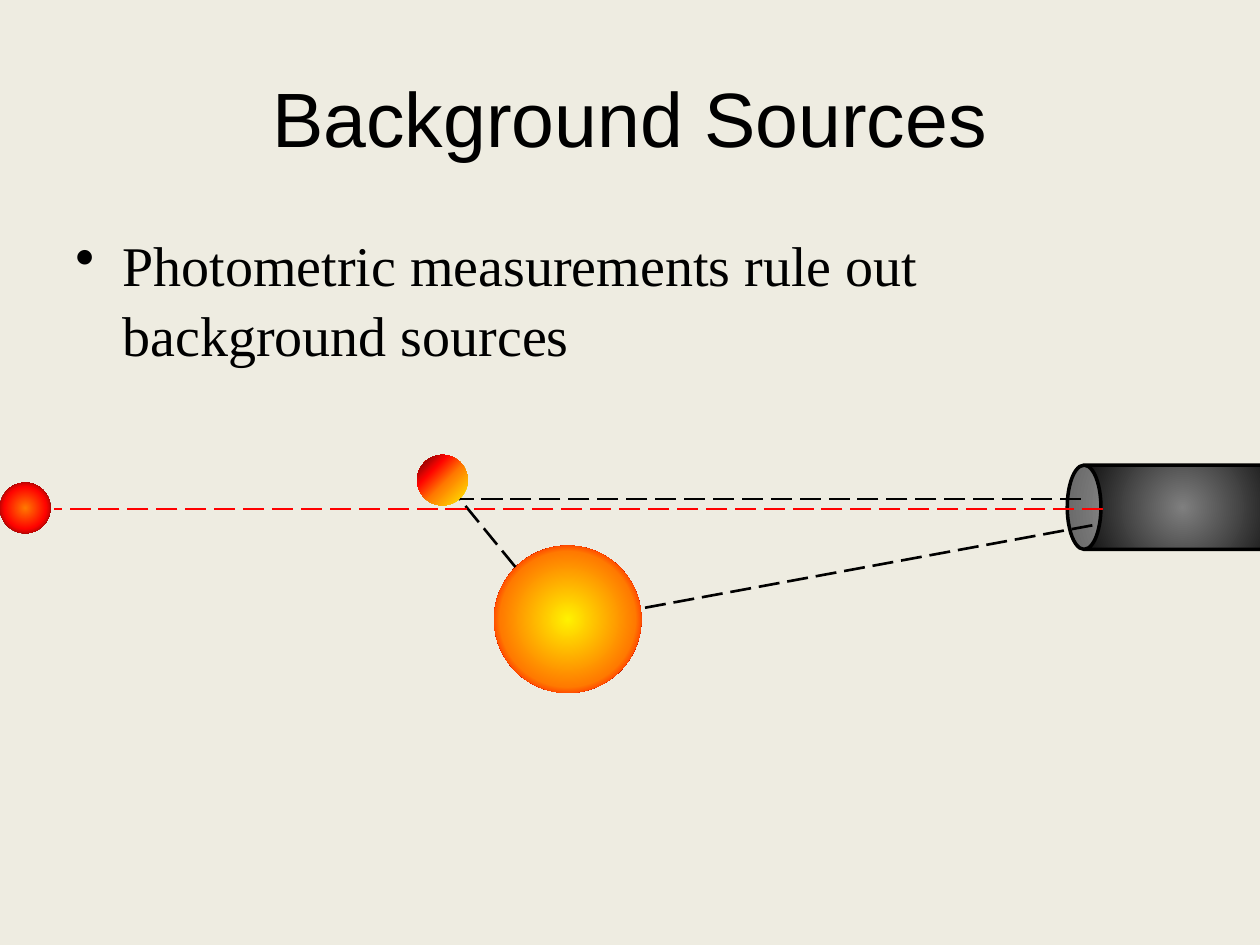
from lxml import etree
from pptx import Presentation
from pptx.dml.color import RGBColor
from pptx.enum.dml import MSO_LINE
from pptx.enum.shapes import MSO_CONNECTOR, MSO_SHAPE
from pptx.enum.text import MSO_ANCHOR, PP_ALIGN
from pptx.oxml import parse_xml
from pptx.oxml.ns import nsdecls, qn
from pptx.util import Cm, Pt

STRAIGHT = MSO_CONNECTOR.STRAIGHT
LONG_DASH = MSO_LINE.LONG_DASH
OVAL, CAN = MSO_SHAPE.OVAL, MSO_SHAPE.CAN
MIDDLE, TOP = MSO_ANCHOR.MIDDLE, MSO_ANCHOR.TOP
CENTER, LEFT = PP_ALIGN.CENTER, PP_ALIGN.LEFT

BACKGROUND = RGBColor(0xEE, 0xEC, 0xE1)
BLACK = RGBColor(0, 0, 0)
RED = RGBColor(0xFF, 0, 0)
YELLOW = RGBColor(0xFF, 0xF2, 0)
ORANGE = RGBColor(0xFF, 0x7A, 0)
SCARLET = RGBColor(0xFF, 0x03, 0)
MAROON = RGBColor(0x4D, 0x08, 0x08)
GRAY = RGBColor(0x7F, 0x7F, 0x7F)

TITLE = "Background Sources"
BULLET = "Photometric measurements rule out background sources"
FIRE = (YELLOW, ORANGE, SCARLET, MAROON)
RADIAL = (
    '<a:path path="circle"><a:fillToRect l="50000" t="50000" r="50000" b="50000"/></a:path>'
)
DIAGONAL = '<a:lin ang="13500000" scaled="0"/>'

TELESCOPE = (22.99, 7.9, 1.7, 4.65)
BODIES = [
    (9.96, 11, 2.97, (0, 65, 81, 100), RADIAL),
    (8.41, 9.17, 1.02, (0, 45, 70, 100), DIAGONAL),
    (0, 9.73, 1.02, (0, 0, 59, 94), RADIAL),
]
LIGHT_PATHS = [
    ((10.39, 11.43), (9.27, 10.06), BLACK),
    ((21.79, 10.06), (9.27, 10.06), BLACK),
    ((22.23, 10.26), (1.09, 10.26), RED),
    ((22.02, 10.59), (12.9, 12.27), BLACK),
]


def add_gradient_shape(slide, kind, box, colors, positions, direction):
    shape = slide.shapes.add_shape(kind, *map(Cm, box))
    shape.shadow.inherit = False
    shape.line.fill.background()
    stops = "".join(
        f'<a:gs pos="{position * 1000}"><a:srgbClr val="{color}"/></a:gs>'
        for position, color in zip(positions, colors)
    )
    gradient = parse_xml(
        f'<a:gradFill {nsdecls("a")} rotWithShape="1">'
        f"<a:gsLst>{stops}</a:gsLst>{direction}</a:gradFill>"
    )
    shape.element.spPr.find(qn("a:prstGeom")).addnext(gradient)
    return shape


def add_text(slide, box, text, font_name, size, anchor, alignment):
    frame = slide.shapes.add_textbox(*map(Cm, box)).text_frame
    frame.word_wrap = True
    frame.vertical_anchor = anchor
    paragraph = frame.paragraphs[0]
    paragraph.text = text
    paragraph.alignment = alignment
    paragraph.font.name = font_name
    paragraph.font.size = Pt(size)
    paragraph.font.color.rgb = BLACK
    return paragraph


def add_bullet(paragraph):
    properties = paragraph._p.get_or_add_pPr()
    properties.set("marL", str(Cm(0.95)))
    properties.set("indent", str(-Cm(0.95)))
    bullet = parse_xml(f'<a:buChar {nsdecls("a")} char="•"/>')
    properties.find(qn("a:defRPr")).addprevious(bullet)


def add_light_path(slide, start, end, color):
    line = slide.shapes.add_connector(STRAIGHT, *map(Cm, start + end))
    line.line.color.rgb = color
    line.line.width = Pt(1.5)
    line.line.dash_style = LONG_DASH
    etree.SubElement(line.element.spPr, qn("a:effectLst"))


def main():
    presentation = Presentation()
    presentation.slide_width, presentation.slide_height = Cm(25.4), Cm(19.05)
    slide = presentation.slides.add_slide(presentation.slide_layouts[6])
    slide.background.fill.solid()
    slide.background.fill.fore_color.rgb = BACKGROUND

    telescope = add_gradient_shape(slide, CAN, TELESCOPE, (GRAY, BLACK), (0, 100), RADIAL)
    telescope.rotation = 270
    telescope.adjustments[0] = 0.4
    telescope.line.color.rgb = BLACK
    telescope.line.width = Pt(2)

    add_text(slide, (1.27, 0.76, 22.86, 3.18), TITLE, "Arial", 44, MIDDLE, CENTER)
    paragraph = add_text(
        slide, (1.27, 4.45, 22.86, 12.57), BULLET, "Times New Roman", 32, TOP, LEFT
    )
    paragraph.space_before = Pt(6.4)
    paragraph.line_spacing = 1.05
    add_bullet(paragraph)

    for left, top, diameter, positions, direction in BODIES:
        box = (left, top, diameter, diameter)
        add_gradient_shape(slide, OVAL, box, FIRE, positions, direction)
    for start, end, color in LIGHT_PATHS:
        add_light_path(slide, start, end, color)

    presentation.save("out.pptx")


if __name__ == "__main__":
    main()
